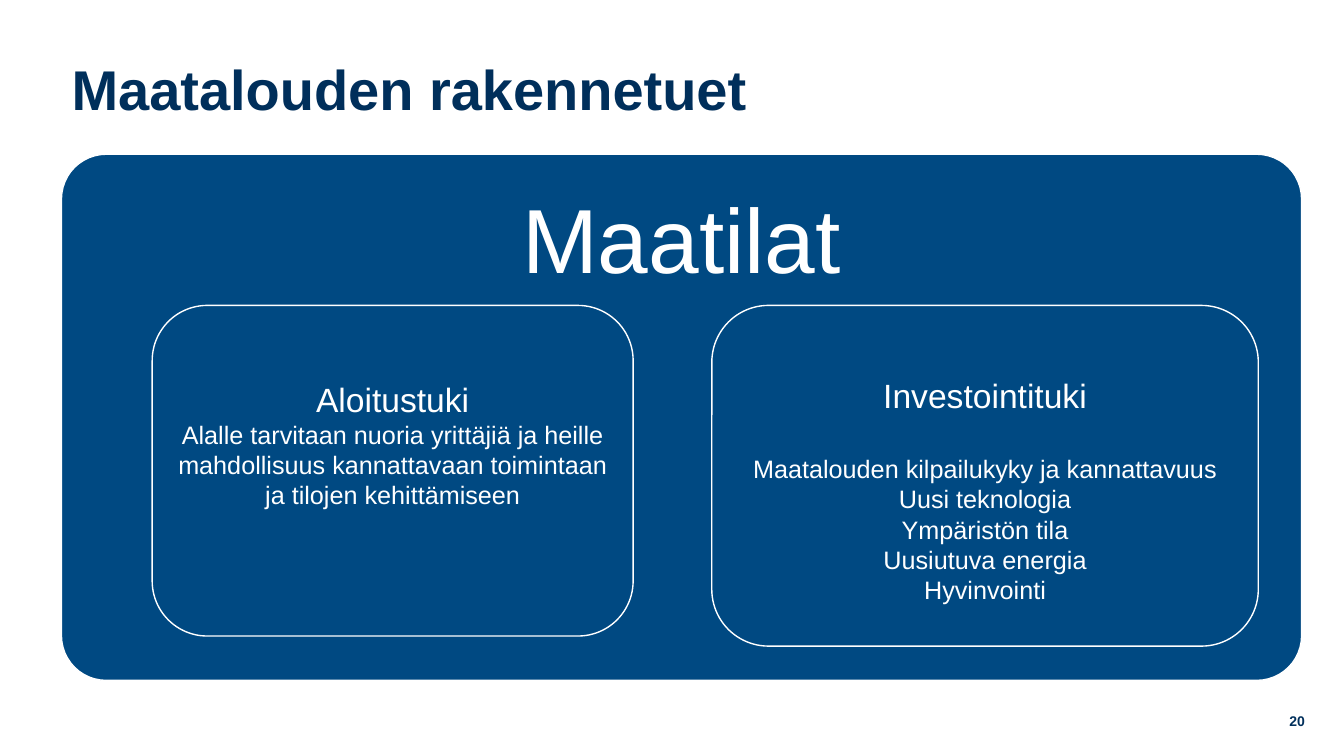
from pptx import Presentation
from pptx.dml.color import RGBColor
from pptx.enum.shapes import MSO_SHAPE
from pptx.enum.text import MSO_ANCHOR, MSO_AUTO_SIZE, PP_ALIGN
from pptx.util import Inches, Pt

ROUND = MSO_SHAPE.ROUNDED_RECTANGLE
TOP, MIDDLE = MSO_ANCHOR.TOP, MSO_ANCHOR.MIDDLE
LEFT, CENTER, RIGHT = PP_ALIGN.LEFT, PP_ALIGN.CENTER, PP_ALIGN.RIGHT
NO_FIT = MSO_AUTO_SIZE.NONE
FONT = "Arial"
COLORS = {"navy": "002F5B", "blue": "004982", "white": "FFFFFF"}


def color(name):
    return RGBColor.from_string(COLORS[name])


def style(para, size, tint, align, bold=False):
    para.alignment = align
    for run in para.runs:
        font = run.font
        font.name, font.size, font.bold = FONT, Pt(size), bold
        font.color.rgb = color(tint)


def place(shape, box):
    shape.left, shape.top, shape.width, shape.height = map(Inches, box)


def add_title(slide, box, text):
    title = slide.shapes.title
    place(title, box)
    frame = title.text_frame
    frame.text = text
    frame.auto_size = NO_FIT
    frame.vertical_anchor = MIDDLE
    style(frame.paragraphs[0], 40, "navy", LEFT, True)


def add_card(slide, box, lines, sizes, inset, gap=0, radius=None):
    """Rounded card: a heading, then smaller lines below it."""
    card = slide.shapes.add_shape(ROUND, *map(Inches, box))
    card.shadow.inherit = False
    card.fill.solid()
    card.fill.fore_color.rgb = color("blue")
    card.line.color.rgb = color("white")
    card.line.width = Pt(1)
    if radius is not None:
        card.adjustments[0] = radius
    frame = card.text_frame
    frame.word_wrap = True
    frame.vertical_anchor = TOP
    frame.margin_top = Inches(inset)
    frame.text = "\n".join(lines)
    head, *body = frame.paragraphs
    style(head, sizes[0], "white", CENTER)
    head.space_after = Pt(gap)
    for para in body:
        style(para, sizes[1], "white", CENTER)
    return head


def add_farms(slide, box):
    """Large panel with the two kinds of support inside it."""
    left, top, _, _ = box
    head = add_card(slide, box, ["Maatilat"], [65], 0.27, radius=0.085)
    head.line_spacing = 0.9

    row = top + 1.5
    invest = ["Investointituki", "Maatalouden kilpailukyky ja kannattavuus",
              "Uusi teknologia", "Ympäristön tila", "Uusiutuva energia",
              "Hyvinvointi"]
    add_card(slide, (left + 6.45, row, 5.42, 3.38), invest, [24, 18], 0.52, 27.6)
    start = ["Aloitustuki",
             "Alalle tarvitaan nuoria yrittäjiä ja heille mahdollisuus "
             "kannattavaan toimintaan ja tilojen kehittämiseen"]
    add_card(slide, (left + 0.9, row, 4.77, 3.28), start, [24, 18], 0.57)


def add_number(slide, box, text):
    frame = slide.shapes.add_textbox(*map(Inches, box)).text_frame
    frame.word_wrap = True
    frame.vertical_anchor = MIDDLE
    frame.text = text
    style(frame.paragraphs[0], 10, "navy", RIGHT, True)


def main():
    deck = Presentation()
    deck.slide_width, deck.slide_height = Inches(13.33), Inches(7.5)
    slide = deck.slides.add_slide(deck.slide_layouts[5])
    add_title(slide, (0.61, 0.4, 10.95, 0.94), "Maatalouden rakennetuet")
    add_farms(slide, (0.61, 1.53, 12.3, 5.22))
    add_number(slide, (10.04, 6.95, 3, 0.4), "20")
    deck.save("out.pptx")


if __name__ == "__main__":
    main()
